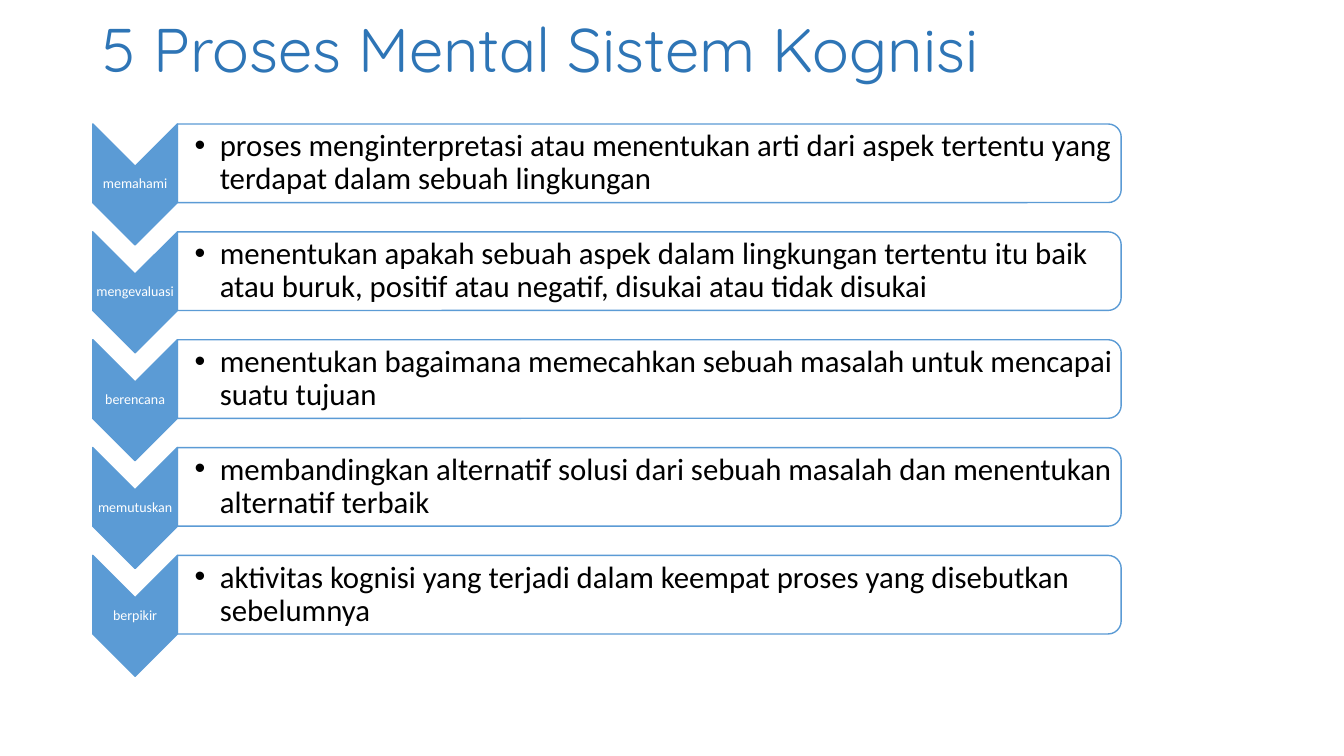
from lxml import etree
from pptx import Presentation
from pptx import util as u
from pptx.dml.color import RGBColor
from pptx.enum import shapes, text
from pptx.oxml.ns import qn

COLORS = {"title": "2E75B6", "accent": "5B9BD5", "white": "FFFFFF", "black": "000000"}
PROCESSES = [
    ("memahami", "proses menginterpretasi atau menentukan arti dari aspek tertentu yang terdapat dalam sebuah lingkungan"),
    ("mengevaluasi", "menentukan apakah sebuah aspek dalam lingkungan tertentu itu baik atau buruk, positif atau negatif, disukai atau tidak disukai"),
    ("berencana", "menentukan bagaimana memecahkan sebuah masalah untuk mencapai suatu tujuan"),
    ("memutuskan", "membandingkan alternatif solusi dari sebuah masalah dan menentukan alternatif terbaik"),
    ("berpikir", "aktivitas kognisi yang terjadi dalam keempat proses yang disebutkan sebelumnya"),
]
CHEVRON_W, CHEVRON_H = 0.84, 1.2
PANEL_H, PITCH = 0.78, 1.07


def rgb(name):
    return RGBColor.from_string(COLORS[name])


def write(tf, content, size, color, font="Calibri", align=text.PP_ALIGN.LEFT,
          insets=(0.1, 0.05, 0.1, 0.05), bullet=False):
    tf.word_wrap = True
    tf.auto_size = text.MSO_AUTO_SIZE.NONE
    tf.vertical_anchor = text.MSO_ANCHOR.MIDDLE
    tf.margin_left, tf.margin_top, tf.margin_right, tf.margin_bottom = map(u.Inches, insets)
    p = tf.paragraphs[0]
    p.alignment, p.line_spacing = align, 0.9
    r = p.add_run()
    r.text = content
    r.font.size, r.font.name = u.Pt(size), font
    r.font.color.rgb = rgb(color)
    if bullet:
        pPr = p._p.get_or_add_pPr()
        pPr.set("marL", str(u.Inches(0.25)))
        pPr.set("indent", str(u.Inches(-0.25)))
        etree.SubElement(pPr, qn("a:buFont"), typeface="Arial")
        etree.SubElement(pPr, qn("a:buChar"), char="•")


def add_text(slide, box, content, **fmt):
    write(slide.shapes.add_textbox(*map(u.Inches, box)).text_frame, content, **fmt)


def add_turned(slide, kind, box, fill):
    """Add a shape turned by 90 degrees so that it covers the given box."""
    x, y, w, h = box
    frame = (x + (w - h) / 2, y + (h - w) / 2, h, w)
    sp = slide.shapes.add_shape(kind, *map(u.Inches, frame))
    sp.rotation = 90
    sp.shadow.inherit = False
    sp.fill.solid()
    sp.fill.fore_color.rgb = rgb(fill)
    sp.line.color.rgb = rgb("accent")
    sp.line.width = u.Pt(1)
    return sp


def add_title(slide, box, content):
    title = slide.shapes.title
    title.left, title.top, title.width, title.height = map(u.Inches, box)
    write(title.text_frame, content, size=44, color="title", font="Quicksand")


def add_process(slide, box, name, description):
    x, y, w, h = box
    # Chevron with its label
    add_turned(slide, shapes.MSO_SHAPE.CHEVRON, (x, y, CHEVRON_W, h), "accent")
    notch = CHEVRON_W / 2
    add_text(slide, (x, y + notch, CHEVRON_W, h - 2 * notch), name, size=10, color="white",
             align=text.PP_ALIGN.CENTER, insets=(0.01,) * 4)
    # Panel with its description
    panel_x, panel_w = x + CHEVRON_W, w - CHEVRON_W
    panel = add_turned(slide, shapes.MSO_SHAPE.ROUND_2_SAME_RECTANGLE,
                       (panel_x, y, panel_w, PANEL_H), "white")
    color = panel.fill._xPr.find(qn("a:solidFill"))[0]
    etree.SubElement(color, qn("a:alpha"), val="90000")
    add_text(slide, (panel_x, y + 0.04, panel_w - 0.04, PANEL_H - 0.08), description,
             size=22, color="black", insets=(0.17, 0.02, 0.02, 0.02), bullet=True)


def add_process_list(slide, box):
    x, y, w = box
    for i, (name, description) in enumerate(PROCESSES):
        add_process(slide, (x, y + i * PITCH, w, CHEVRON_H), name, description)


def main():
    prs = Presentation()
    prs.slide_width, prs.slide_height = u.Inches(13.33), u.Inches(7.5)
    slide = prs.slides.add_slide(prs.slide_layouts[5])
    add_title(slide, (0.92, 0, 11.5, 1.05), "5 Proses Mental Sistem Kognisi")
    add_process_list(slide, (0.92, 1.23, 10.2))
    prs.save("out.pptx")


if __name__ == "__main__":
    main()
